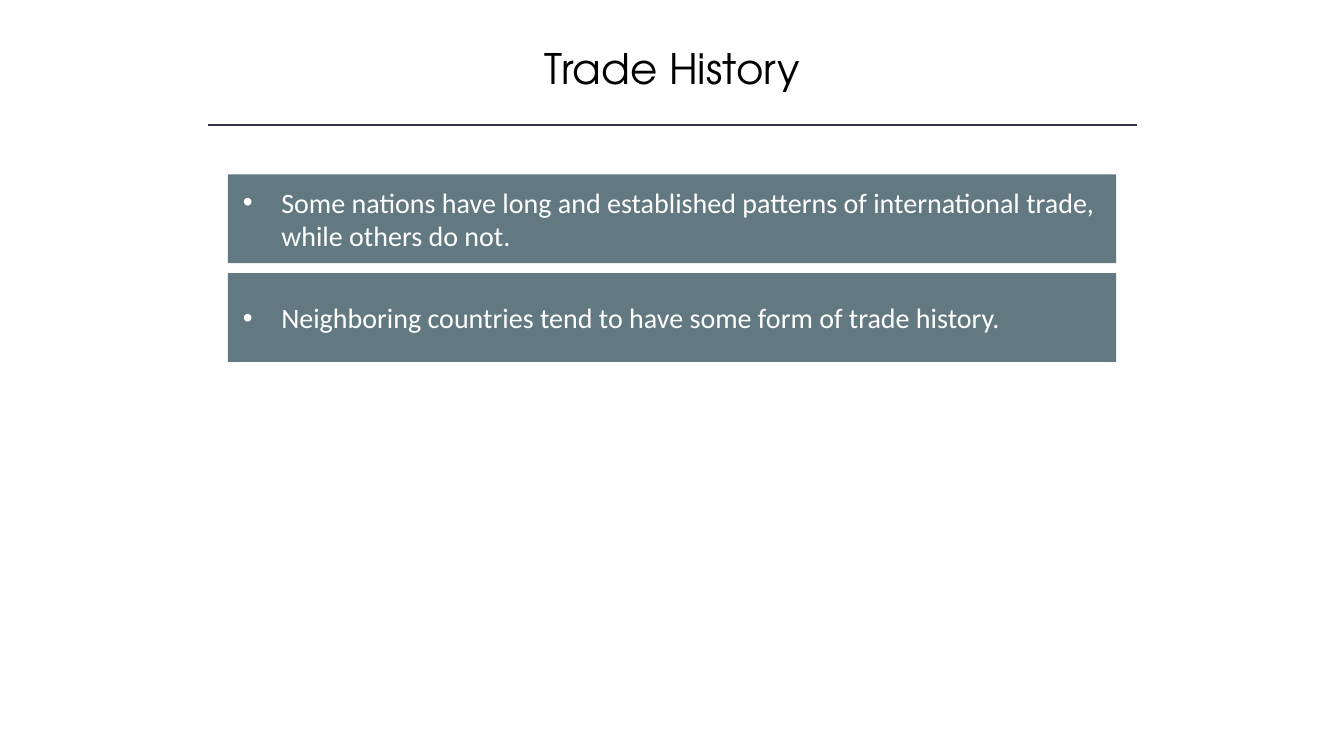
from dataclasses import dataclass

from lxml import etree
from pptx import Presentation
from pptx.dml.color import RGBColor
from pptx.enum import shapes, text
from pptx.oxml import ns
from pptx.util import Inches, Pt


@dataclass(frozen=True)
class Theme:
    black = RGBColor.from_string("000000")
    white = RGBColor.from_string("FFFFFF")
    slate = RGBColor.from_string("627981")
    rule = RGBColor.from_string("323542")
    title_font = "TeX Gyre Adventor"
    body_font = "Calibri"
    title_size = Pt(30)
    body_size = Pt(20)


def format_run(run, name, size, color):
    run.font.name = name
    run.font.size = size
    run.font.color.rgb = color


theme = Theme()
presentation = Presentation()
presentation.slide_width = Inches(13.33)
presentation.slide_height = Inches(7.5)
slide = presentation.slides.add_slide(presentation.slide_layouts[5])

title = slide.shapes.title
title.left, title.top = Inches(1.67), Inches(0.37)
title.width, title.height = Inches(10), Inches(0.61)
title.text_frame.text = "Trade History"
title.text_frame.vertical_anchor = text.MSO_ANCHOR.MIDDLE
title_paragraph = title.text_frame.paragraphs[0]
title_paragraph.alignment = text.PP_ALIGN.CENTER
format_run(title_paragraph.runs[0], theme.title_font, theme.title_size, theme.black)

divider = slide.shapes.add_connector(
    shapes.MSO_CONNECTOR.STRAIGHT, Inches(2.06), Inches(1.24), Inches(11.28), Inches(1.24)
)
divider.line.color.rgb = theme.rule
divider.line.width = Pt(1)
etree.SubElement(divider.element.spPr, ns.qn("a:effectLst"))

statements = [
    "Some nations have long and established patterns of international trade, while others do not.",
    "Neighboring countries tend to have some form of trade history.",
]
bar_top, bar_pitch = 1.73, 0.98

for index, statement in enumerate(statements):
    bar = slide.shapes.add_shape(
        shapes.MSO_SHAPE.RECTANGLE,
        Inches(2.26), Inches(bar_top + index * bar_pitch), Inches(8.81), Inches(0.88),
    )
    bar.shadow.inherit = False
    bar.fill.solid()
    bar.fill.fore_color.rgb = theme.slate
    bar.line.fill.background()

    frame = bar.text_frame
    frame.text = statement
    frame.word_wrap = True
    frame.vertical_anchor = text.MSO_ANCHOR.MIDDLE
    frame.margin_left = Inches(0.15)
    frame.margin_right = Inches(0.1)

    paragraph = frame.paragraphs[0]
    paragraph.alignment = text.PP_ALIGN.LEFT
    format_run(paragraph.runs[0], theme.body_font, theme.body_size, theme.white)
    properties = paragraph._p.get_or_add_pPr()
    properties.set("marL", str(Inches(0.38)))
    properties.set("indent", str(-Inches(0.38)))
    etree.SubElement(properties, ns.qn("a:buFont"), typeface="Arial")
    etree.SubElement(properties, ns.qn("a:buChar"), char="•")

presentation.save("out.pptx")
